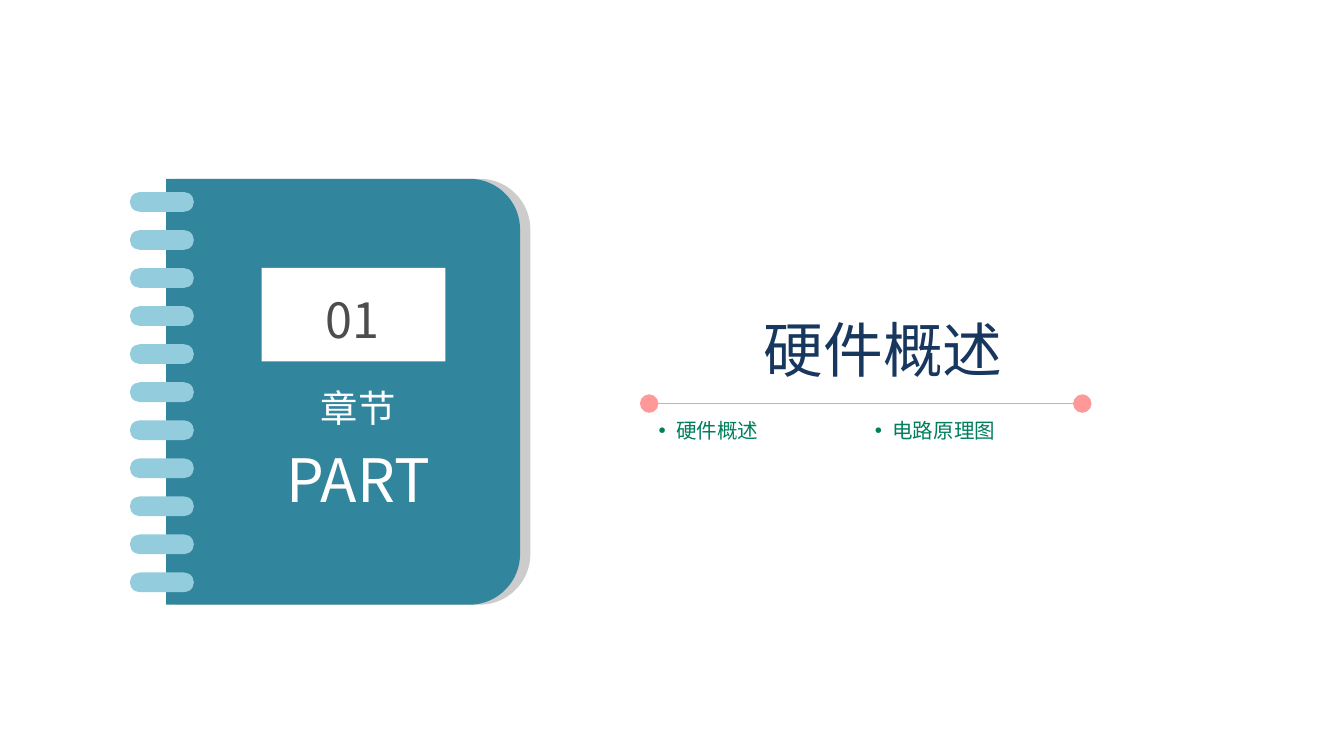
from math import cos, radians, sin

from lxml import etree
from pptx import Presentation
from pptx.dml.color import RGBColor
from pptx.enum.shapes import MSO_CONNECTOR, MSO_SHAPE
from pptx.enum.text import MSO_AUTO_SIZE, PP_ALIGN
from pptx.oxml.ns import qn
from pptx.util import Pt

STRAIGHT = MSO_CONNECTOR.STRAIGHT
RECT, ROUNDED = MSO_SHAPE.RECTANGLE, MSO_SHAPE.ROUNDED_RECTANGLE
CENTER = PP_ALIGN.CENTER
GROW = MSO_AUTO_SIZE.SHAPE_TO_FIT_TEXT
LATIN, CJK = "Arial", "Noto Sans CJK SC"
RING_COUNT, RING_TOP, RING_PITCH = 11, 102.9, 20.38


def color(value):
    """Turn a hex string into a colour."""
    return RGBColor.from_string(value)


def paint(s, fill):
    """Give a shape a plain fill without line or shadow."""
    s.shadow.inherit = False
    s.fill.solid()
    s.fill.fore_color.rgb = color(fill)
    s.line.fill.background()


def add_block(shapes, kind, x, y, w, h, fill):
    """Add a filled preset shape."""
    s = shapes.add_shape(kind, Pt(x), Pt(y), Pt(w), Pt(h))
    paint(s, fill)
    return s


def add_cover(shapes, x, y, w, h, radius, fill):
    """Add a book cover whose right corners are rounded."""
    right, bottom = x + w - radius, y + h - radius
    arc = [(radius * cos(radians(a)), radius * sin(radians(a))) for a in range(0, 91, 3)]
    points = [(right + dx, y + radius - dy) for dx, dy in reversed(arc)]
    points += [(right + dx, bottom + dy) for dx, dy in arc]
    points.append((x, y + h))
    builder = shapes.build_freeform(Pt(x), Pt(y), scale=1.0)
    builder.add_line_segments([(Pt(px), Pt(py)) for px, py in points], close=True)
    paint(builder.convert_to_shape(), fill)


def add_text(shapes, x, y, w, h, lines, font, fill, margins=(0, 0), wrap=True, bullet=False):
    """Add a text box from (text, size) lines, centred or bulleted."""
    tf = shapes.add_textbox(Pt(x), Pt(y), Pt(w), Pt(h)).text_frame
    tf.word_wrap, tf.auto_size = wrap, GROW
    tf.margin_left = tf.margin_right = Pt(margins[0])
    tf.margin_top = tf.margin_bottom = Pt(margins[1])
    tf.text = "\n".join(text for text, _ in lines)
    for i, (p, (_, size)) in enumerate(zip(tf.paragraphs, lines)):
        if bullet:
            add_bullet(p)
        else:
            p.alignment = CENTER
        if i:
            p.space_before = Pt(size * 0.2)
        for r in p.runs:
            r.font.name, r.font.size = font, Pt(size)
            r.font.color.rgb = color(fill)


def add_bullet(p):
    """Give a paragraph a round bullet with a hanging indent."""
    pPr = p._p.get_or_add_pPr()
    pPr.set("marL", str(Pt(9.4)))
    pPr.set("indent", str(Pt(-9.4)))
    etree.SubElement(pPr, qn("a:buFont")).set("typeface", LATIN)
    etree.SubElement(pPr, qn("a:buChar")).set("char", "•")


def add_rule(shapes, x1, x2, y, fill):
    """Add a horizontal line with a dot at each end."""
    s = shapes.add_connector(STRAIGHT, Pt(x1), Pt(y), Pt(x2), Pt(y))
    s.line.color.rgb = color(fill)
    s.line.width = Pt(1)
    ln = s.line._get_or_add_ln()
    for end in ("a:headEnd", "a:tailEnd"):
        etree.SubElement(ln, qn(end), type="oval", w="lg", len="lg")
    etree.SubElement(s._element.spPr, qn("a:effectLst"))


def add_notebook(shapes):
    """Add the ring-bound notebook with its chapter number."""
    book = shapes.add_group_shape().shapes
    add_cover(book, 94.5, 95.8, 189.6, 228.2, 27.2, "CCCCCC")
    add_cover(book, 89, 95.8, 189.6, 228.2, 27.2, "31859C")
    add_block(book, RECT, 140.2, 143.5, 98.4, 50.1, "FFFFFF")
    for i in range(RING_COUNT):
        ring = add_block(book, ROUNDED, 69.6, RING_TOP + i * RING_PITCH, 34.3, 10.6, "93CDDD")
        ring.adjustments[0] = 0.5
    add_text(book, 142.6, 155.5, 92.9, 31.7, [("01", 26)], CJK, "4D4D4D")
    add_text(book, 147.6, 206.6, 88.6, 70.6, [("章节", 20), ("PART", 32)], CJK, "FFFFFF")


def main():
    """Build the chapter slide."""
    prs = Presentation()
    prs.slide_width, prs.slide_height = Pt(720), Pt(405)
    shapes = prs.slides.add_slide(prs.slide_layouts[6]).shapes
    add_rule(shapes, 347.8, 579.8, 216.2, "FF9999")
    add_text(shapes, 347.8, 167.8, 250.6, 38.9, [("硬件概述", 32)], LATIN, "17375E")
    for x, w, topic in ((347.8, 64.1, "硬件概述"), (463.7, 74.9, "电路原理图")):
        add_text(shapes, x, 221, w, 18.7, [(topic, 11)], LATIN, "007E5D",
                 margins=(5, 2.9), wrap=False, bullet=True)
    add_notebook(shapes)
    prs.save("out.pptx")


if __name__ == "__main__":
    main()
